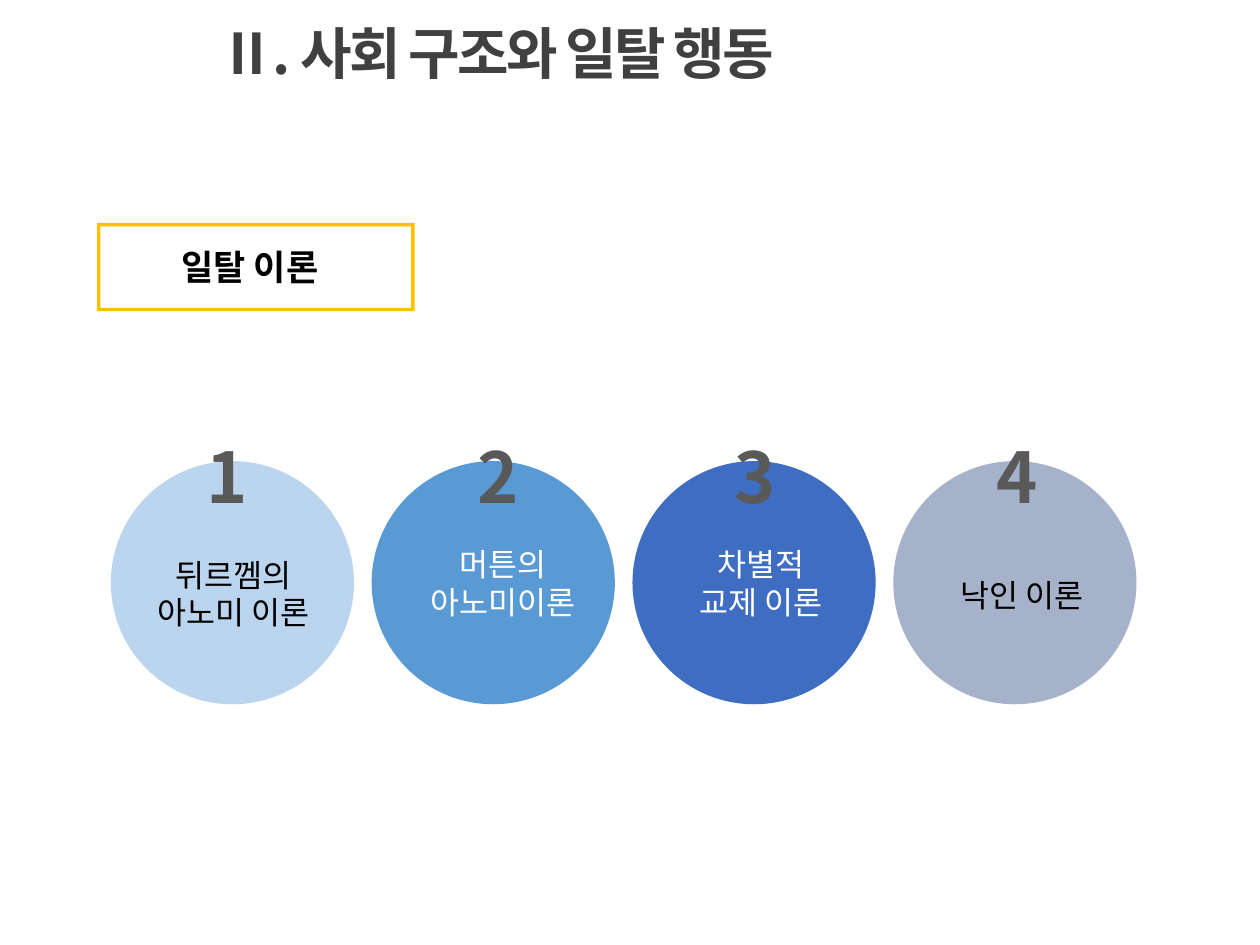
from lxml.etree import SubElement
from pptx import Presentation
from pptx.dml.color import RGBColor
from pptx.enum.shapes import MSO_SHAPE
from pptx.enum.text import MSO_ANCHOR, PP_ALIGN
from pptx.oxml.ns import qn
from pptx.util import Inches, Pt

KOREAN, LATIN = "Noto Sans CJK KR", "Calibri"
COLORS = {
    "title": "404040", "number": "595959", "black": "000000",
    "white": "FFFFFF", "frame": "FFC000", "durkheim": "79ADDD",
    "merton": "599AD5", "association": "3E6DC2", "labeling": "294983",
}
LEFT, TOP, STEP, DIAMETER = 0.88, 3.66, 2.07, 1.93
NUMBER_TOP = 3.39

# fill, opacity %, number offset, label (offset, top, width, height), colour, lines
THEORIES = [
    ("durkheim", 51, 0.66, (0.1, 4.36, 1.74, 0.71), "black",
     ["뒤르껨의", "아노미 이론"]),
    ("merton", 100, 0.74, (0.31, 4.28, 1.47, 0.71), "white",
     ["머튼의", "아노미이론"]),
    ("association", 100, 0.71, (0.27, 4.28, 1.5, 0.71), "white",
     ["차별적", "교제 이론"]),
    ("labeling", 42, 0.72, (0, 4.52, 2.04, 0.4), "black",
     ["낙인 이론"]),
]


def rgb(name):
    return RGBColor.from_string(COLORS[name])


def add_text(slide, box, lines, size, color, font=KOREAN, bold=False,
             align=PP_ALIGN.CENTER, anchor=MSO_ANCHOR.TOP, spacing=0):
    """Add one paragraph per line; spacing is letter spacing in points."""
    tf = slide.shapes.add_textbox(*map(Inches, box)).text_frame
    tf.word_wrap = True
    tf.vertical_anchor = anchor
    tf.text = "\n".join(lines)
    for p in tf.paragraphs:
        p.alignment = align
        p.font.size = Pt(size)
        p.font.bold = bold
        p.font.name = font
        p.font.color.rgb = rgb(color)
        props = p.runs[0].font._element
        if spacing:
            props.set("spc", str(round(spacing * 100)))
        SubElement(props, qn("a:ea")).set("typeface", KOREAN)


def add_filled(slide, kind, box, color, opacity=100):
    sp = slide.shapes.add_shape(kind, *map(Inches, box))
    sp.shadow.inherit = False
    sp.fill.solid()
    sp.fill.fore_color.rgb = rgb(color)
    sp.line.fill.background()
    if opacity < 100:
        clr = sp.fill._xPr.find(".//" + qn("a:srgbClr"))
        SubElement(clr, qn("a:alpha")).set("val", str(opacity * 1000))
    return sp


def add_theory(slide, index, fill, opacity, number_offset, label, color, lines):
    left = LEFT + index * STEP
    add_filled(slide, MSO_SHAPE.OVAL, (left, TOP, DIAMETER, DIAMETER),
               fill, opacity)
    add_text(slide, (left + number_offset, NUMBER_TOP, 0.63, 0.77),
             [str(index + 1)], 40, "number", bold=True, align=PP_ALIGN.LEFT)
    offset, *rest = label
    add_text(slide, (left + offset, *rest), lines, 18, color, font=LATIN)


def main():
    prs = Presentation()
    prs.slide_width, prs.slide_height = Inches(10), Inches(7.5)
    slide = prs.slides.add_slide(prs.slide_layouts[6])
    add_text(slide, (1.64, -0.01, 8.02, 0.85), ["Ⅱ. 사회 구조와 일탈 행동"],
             32, "title", bold=True, align=PP_ALIGN.LEFT,
             anchor=MSO_ANCHOR.MIDDLE, spacing=-1.5)
    add_text(slide, (0.77, 1.9, 2.43, 0.44), ["일탈 이론"], 20, "black", bold=True)
    frame = add_filled(slide, MSO_SHAPE.FRAME, (0.77, 1.77, 2.52, 0.7), "frame")
    frame.adjustments[0] = 0.038
    for index, theory in enumerate(THEORIES):
        add_theory(slide, index, *theory)
    prs.save("out.pptx")


if __name__ == "__main__":
    main()
